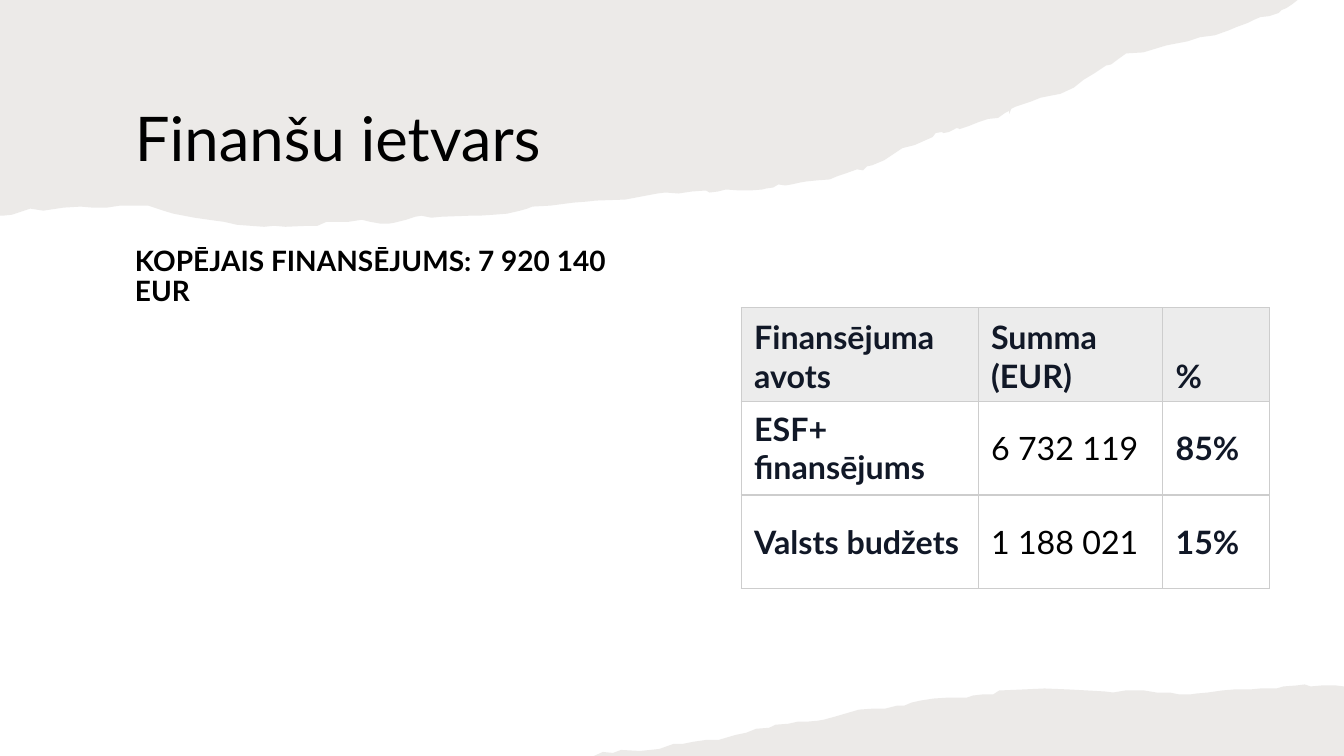
from lxml.etree import SubElement
from pptx import Presentation
from pptx.dml.color import RGBColor
from pptx.enum.text import MSO_ANCHOR
from pptx.oxml.ns import qn
from pptx.util import Inches, Pt

SLIDE_W, SLIDE_H = 13.33, 7.5
FONT = "Lato"
BLACK = RGBColor(0x00, 0x00, 0x00)
WHITE = RGBColor(0xFF, 0xFF, 0xFF)
NAVY = RGBColor(0x11, 0x18, 0x27)
HEADER_GREY = RGBColor(0xEC, 0xEC, 0xEC)
GRID_GREY = RGBColor(0xCD, 0xCD, 0xCD)
PAPER = RGBColor(0x82, 0x76, 0x6A)
PAPER_OPACITY = 15

# Torn edges, in inches from the top left of each paper's box
TOP_TEAR = [
    (12.87, 0), (12.82, 0.04), (12.76, 0.08), (12.71, 0.1), (12.68, 0.13), (12.59, 0.16),
    (12.5, 0.17), (12.43, 0.2), (12.37, 0.23), (12.26, 0.27), (12.19, 0.3), (12.05, 0.35),
    (11.9, 0.37), (11.78, 0.41), (11.57, 0.45), (11.34, 0.52), (11.17, 0.53), (11.1, 0.58),
    (11.02, 0.64), (10.97, 0.65), (10.85, 0.73), (10.75, 0.79), (10.65, 0.87), (10.52, 0.93),
    (10.32, 0.97), (10.22, 1.01), (10.07, 1.06), (10.03, 1.08), (10.01, 1.13), (10.01, 1.1),
    (9.97, 1.12), (9.9, 1.17), (9.8, 1.18), (9.71, 1.21), (9.61, 1.25), (9.52, 1.28),
    (9.49, 1.27), (9.41, 1.31), (9.36, 1.32), (9.34, 1.31), (9.28, 1.32), (9.25, 1.36),
    (9.07, 1.44), (8.95, 1.47), (8.86, 1.53), (8.77, 1.59), (8.65, 1.64), (8.6, 1.65),
    (8.56, 1.69), (8.5, 1.68), (8.39, 1.72), (8.3, 1.75), (8.23, 1.78), (8.1, 1.79),
    (8, 1.8), (7.94, 1.81), (7.85, 1.83), (7.79, 1.84), (7.72, 1.83), (7.67, 1.86),
    (7.6, 1.87), (7.56, 1.88), (7.44, 1.89), (7.34, 1.89), (7.2, 1.88), (7.12, 1.9),
    (7.04, 1.91), (7, 1.89), (6.86, 1.9), (6.73, 1.92), (6.6, 1.91), (6.52, 1.92),
    (6.2, 1.98), (5.91, 1.99), (5.82, 2), (5.69, 2.01), (5.46, 2.04), (5.28, 2.05),
    (5.23, 2.07), (5.16, 2.09), (5.03, 2.12), (4.9, 2.13), (4.75, 2.14), (4.66, 2.14),
    (4.38, 2.15), (4.28, 2.16), (4.18, 2.14), (4.12, 2.15), (4.03, 2.18), (3.91, 2.21),
    (3.85, 2.22), (3.78, 2.22), (3.67, 2.2), (3.59, 2.18), (3.46, 2.2), (3.24, 2.2),
    (3.15, 2.24), (3.06, 2.24), (2.83, 2.25), (2.72, 2.24), (2.62, 2.25), (2.48, 2.24),
    (2.35, 2.23), (2.22, 2.2), (2.14, 2.19), (1.93, 2.16), (1.72, 2.12), (1.62, 2.09),
    (1.47, 2.04), (1.34, 2.04), (1.19, 2.04), (1.06, 2.06), (0.92, 2.06), (0.8, 2.05),
    (0.63, 2.06), (0.43, 2.09), (0.3, 2.07), (0.12, 2.13), (0.03, 2.14), (0, 2.14)]
BOTTOM_TEAR = [
    (0, 0.71), (0.09, 0.67), (0.19, 0.68), (0.27, 0.65), (0.46, 0.66), (0.65, 0.64),
    (0.79, 0.59), (0.88, 0.59), (0.98, 0.57), (1.12, 0.55), (1.24, 0.55), (1.41, 0.5),
    (1.51, 0.48), (1.61, 0.44), (1.74, 0.43), (1.8, 0.4), (1.93, 0.39), (2.02, 0.37),
    (2.11, 0.37), (2.22, 0.36), (2.28, 0.35), (2.39, 0.32), (2.63, 0.25), (2.77, 0.24),
    (2.89, 0.24), (3.01, 0.21), (3.08, 0.21), (3.15, 0.18), (3.24, 0.16), (3.37, 0.14),
    (3.52, 0.13), (3.7, 0.13), (3.76, 0.11), (3.85, 0.1), (3.96, 0.1), (4.02, 0.06),
    (4.26, 0.05), (4.47, 0.04), (4.71, 0.05), (4.9, 0.06), (5.07, 0.07), (5.15, 0.08),
    (5.27, 0.06), (5.46, 0.06), (5.58, 0.08), (5.71, 0.08), (5.81, 0.1), (5.91, 0.1),
    (5.98, 0.09), (6.09, 0.08), (6.23, 0.06), (6.35, 0.05), (6.51, 0.05), (6.61, 0.04),
    (6.77, 0.04), (6.84, 0.02), (6.97, 0.01), (7.05, 0), (7.11, 0.02), (7.22, 0.01),
    (7.36, 0.01), (7.44, 0.02)]

COLUMN_WIDTHS = (2.35, 1.83, 1.06)
ROW_HEIGHT = 0.93
FUNDING = [("Finansējuma avots", "Summa (EUR)", "%"),
           ("ESF+ finansējums", "6 732 119", "85%"),
           ("Valsts budžets", "1 188 021", "15%")]


def style_font(font, size, color, bold=False):
    for name, value in {"name": FONT, "size": Pt(size), "bold": bold}.items():
        setattr(font, name, value)
    font.color.rgb = color


def add_torn_paper(slide, left, top, tear, corners):
    """Translucent paper: the tear, closed through the given corners."""
    outline = [(Inches(left + x), Inches(top + y)) for x, y in tear + corners]
    builder = slide.shapes.build_freeform(*outline[0])
    builder.add_line_segments(outline[1:], close=True)
    paper = builder.convert_to_shape()
    paper.shadow.inherit = False
    paper.line.fill.background()
    paper.fill.solid()
    paper.fill.fore_color.rgb = PAPER
    tint = paper.fill._xPr.find(qn("a:solidFill"))[0]
    SubElement(tint, qn("a:alpha"), val=str(PAPER_OPACITY * 1000))


def add_text(slide, left, top, width, height, text, size, anchor, bold=False, space_after=0):
    box = slide.shapes.add_textbox(*map(Inches, (left, top, width, height)))
    frame = box.text_frame
    frame.word_wrap = True
    frame.vertical_anchor = anchor
    paragraph = frame.paragraphs[0]
    paragraph.line_spacing = 0.9
    paragraph.space_after = Pt(space_after)
    run = paragraph.add_run()
    run.text = text
    style_font(run.font, size, BLACK, bold)


def add_borders(cell, widths):
    properties = cell._tc.get_or_add_tcPr()
    for side, width in widths.items():
        border = SubElement(properties, qn(f"a:ln{side}"), w=str(Pt(width)))
        fill = SubElement(border, qn("a:solidFill"))
        SubElement(fill, qn("a:srgbClr"), val=str(GRID_GREY))


def add_funding_table(slide, left, top):
    row_count = len(FUNDING)
    table = slide.shapes.add_table(
        row_count, len(COLUMN_WIDTHS), Inches(left), Inches(top),
        Inches(sum(COLUMN_WIDTHS)), Inches(ROW_HEIGHT * row_count)).table
    for column, width in zip(table.columns, COLUMN_WIDTHS):
        column.width = Inches(width)
    for r, entries in enumerate(FUNDING):
        table.rows[r].height = Inches(ROW_HEIGHT)
        is_header = r == 0
        for c, entry in enumerate(entries):
            cell = table.cell(r, c)
            cell_format = {
                "margin_left": Inches(0.13), "margin_right": Inches(0.13),
                "margin_top": Inches(0.06), "margin_bottom": Inches(0.06),
                "vertical_anchor": MSO_ANCHOR.BOTTOM if is_header else MSO_ANCHOR.MIDDLE}
            for name, value in cell_format.items():
                setattr(cell, name, value)
            # Outer edges are thinner than the rules between rows
            add_borders(cell, {"L": 0.6, "R": 0.6, "T": 0.6 if is_header else 1,
                               "B": 0.6 if r == row_count - 1 else 1})
            cell.fill.solid()
            cell.fill.fore_color.rgb = HEADER_GREY if is_header else WHITE
            is_amount = c == 1 and not is_header
            run = cell.text_frame.paragraphs[0].add_run()
            run.text = entry
            style_font(run.font, 23, BLACK if is_amount else NAVY, not is_amount)


def build_funding_slide(presentation):
    slide = presentation.slides.add_slide(presentation.slide_layouts[6])
    slide.background.fill.solid()
    slide.background.fill.fore_color.rgb = WHITE
    # Heading on torn paper
    add_torn_paper(slide, 0, 0, TOP_TEAR, [(0, 0)])
    add_text(slide, 1.24, 0.67, 10.27, 1.46, "Finanšu ietvars", 44, MSO_ANCHOR.MIDDLE)
    # Total funding
    add_text(slide, 1.24, 2.4, 5.42, 4.28, "KOPĒJAIS FINANSĒJUMS: 7 920 140 EUR", 20,
             MSO_ANCHOR.TOP, bold=True, space_after=6)
    # Paper strip at the foot
    add_torn_paper(slide, 5.89, 6.79, BOTTOM_TEAR, [(7.44, 0.71)])
    # Funding by source
    add_funding_table(slide, 7.35, 3.05)


def main():
    presentation = Presentation()
    presentation.slide_width = Inches(SLIDE_W)
    presentation.slide_height = Inches(SLIDE_H)
    build_funding_slide(presentation)
    presentation.save("out.pptx")


if __name__ == "__main__":
    main()
